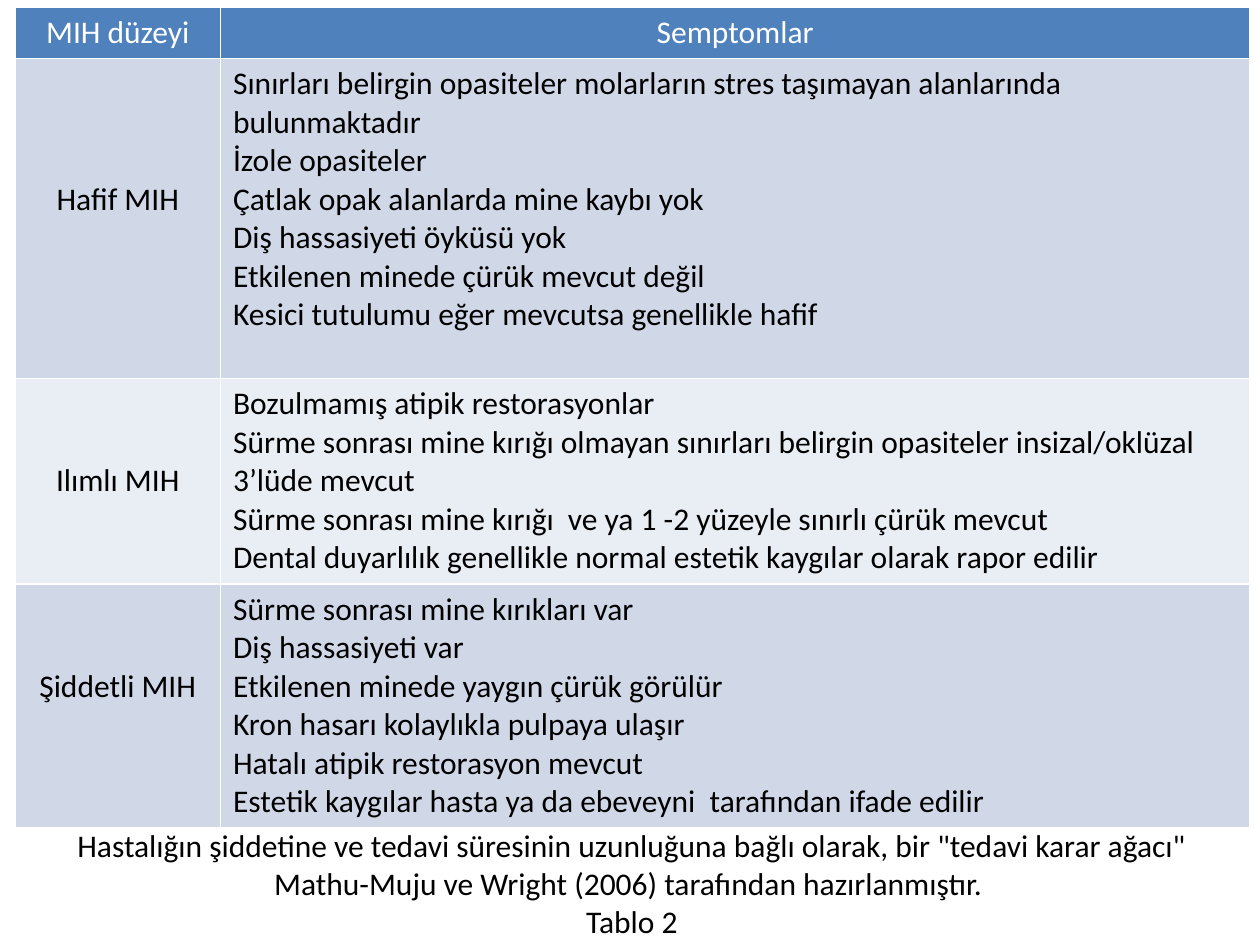
from dataclasses import dataclass

from pptx import Presentation
from pptx.dml.color import RGBColor
from pptx.enum.text import PP_ALIGN
from pptx.util import Inches, Pt

HEAD = ("MIH düzeyi", "Semptomlar")
# level, lines the label sits below the row top, row height, symptoms
LEVELS = [
    ("Hafif MIH", 3, 2.54, [
        "Sınırları belirgin opasiteler molarların stres taşımayan alanlarında bulunmaktadır",
        "İzole opasiteler",
        "Çatlak opak alanlarda mine kaybı yok",
        "Diş hassasiyeti öyküsü yok",
        "Etkilenen minede çürük mevcut değil",
        "Kesici tutulumu eğer mevcutsa genellikle hafif",
    ]),
    ("Ilımlı MIH", 2, 1.63, [
        "Bozulmamış atipik restorasyonlar",
        "Sürme sonrası mine kırığı olmayan sınırları belirgin opasiteler insizal/oklüzal 3’lüde mevcut",
        "Sürme sonrası mine kırığı  ve ya 1 -2 yüzeyle sınırlı çürük mevcut",
        "Dental duyarlılık genellikle normal estetik kaygılar olarak rapor edilir",
    ]),
    ("Şiddetli MIH", 2, 1.93, [
        "Sürme sonrası mine kırıkları var",
        "Diş hassasiyeti var",
        "Etkilenen minede yaygın çürük görülür",
        "Kron hasarı kolaylıkla pulpaya ulaşır",
        "Hatalı atipik restorasyon mevcut",
        "Estetik kaygılar hasta ya da ebeveyni  tarafından ifade edilir",
    ]),
]
NOTE = ('Hastalığın şiddetine ve tedavi süresinin uzunluğuna bağlı olarak, bir "tedavi karar ağacı" '
        "Mathu-Muju ve Wright (2006) tarafından hazırlanmıştır. \vTablo 2")

COLS = (1.63, 8.17)
HEAD_H = 0.4
LINE = 0.305
PAD = 0.05


@dataclass(frozen=True)
class Theme:
    font: str = "Calibri"
    size: int = 18
    ink: str = "000000"
    light: str = "FFFFFF"
    head: str = "4F81BD"
    bands: tuple = ("D0D8E8", "E9EDF4")


THEME = Theme()


def write(frame, lines, color, align):
    frame.text = "\n".join(lines)
    for para in frame.paragraphs:
        para.alignment = align
        para.font.name = THEME.font
        para.font.size = Pt(THEME.size)
        para.font.bold = False
        para.font.color.rgb = RGBColor.from_string(color)


def fill_cell(cell, lines, fill, color=THEME.ink, align=PP_ALIGN.CENTER, skip=0):
    """Fill one cell; skip lowers the text by that many lines."""
    cell.fill.solid()
    cell.fill.fore_color.rgb = RGBColor.from_string(fill)
    cell.margin_top = Inches(PAD + skip * LINE)
    write(cell.text_frame, lines, color, align)


def add_levels(slide):
    heights = [HEAD_H] + [level[2] for level in LEVELS]
    table = slide.shapes.add_table(
        len(heights), len(COLS), Inches(0.12), Inches(0.06),
        Inches(sum(COLS)), Inches(sum(heights))).table
    for col, width in zip(table.columns, COLS):
        col.width = Inches(width)
    for row, height in zip(table.rows, heights):
        row.height = Inches(height)
    for col, title in enumerate(HEAD):
        fill_cell(table.cell(0, col), [title], THEME.head, THEME.light)
    for row, (name, skip, _, signs) in enumerate(LEVELS, 1):
        band = THEME.bands[(row - 1) % 2]
        fill_cell(table.cell(row, 0), [name], band, skip=skip)
        fill_cell(table.cell(row, 1), signs, band, align=PP_ALIGN.LEFT)


def add_note(slide):
    box = slide.shapes.add_textbox(Inches(0.29), Inches(6.51), Inches(9.45), Inches(1.01))
    box.text_frame.word_wrap = True
    write(box.text_frame, [NOTE], THEME.ink, PP_ALIGN.CENTER)


def main():
    deck = Presentation()
    deck.slide_width, deck.slide_height = Inches(10), Inches(7.5)
    slide = deck.slides.add_slide(deck.slide_layouts[6])
    add_levels(slide)
    add_note(slide)
    deck.save("out.pptx")


if __name__ == "__main__":
    main()
